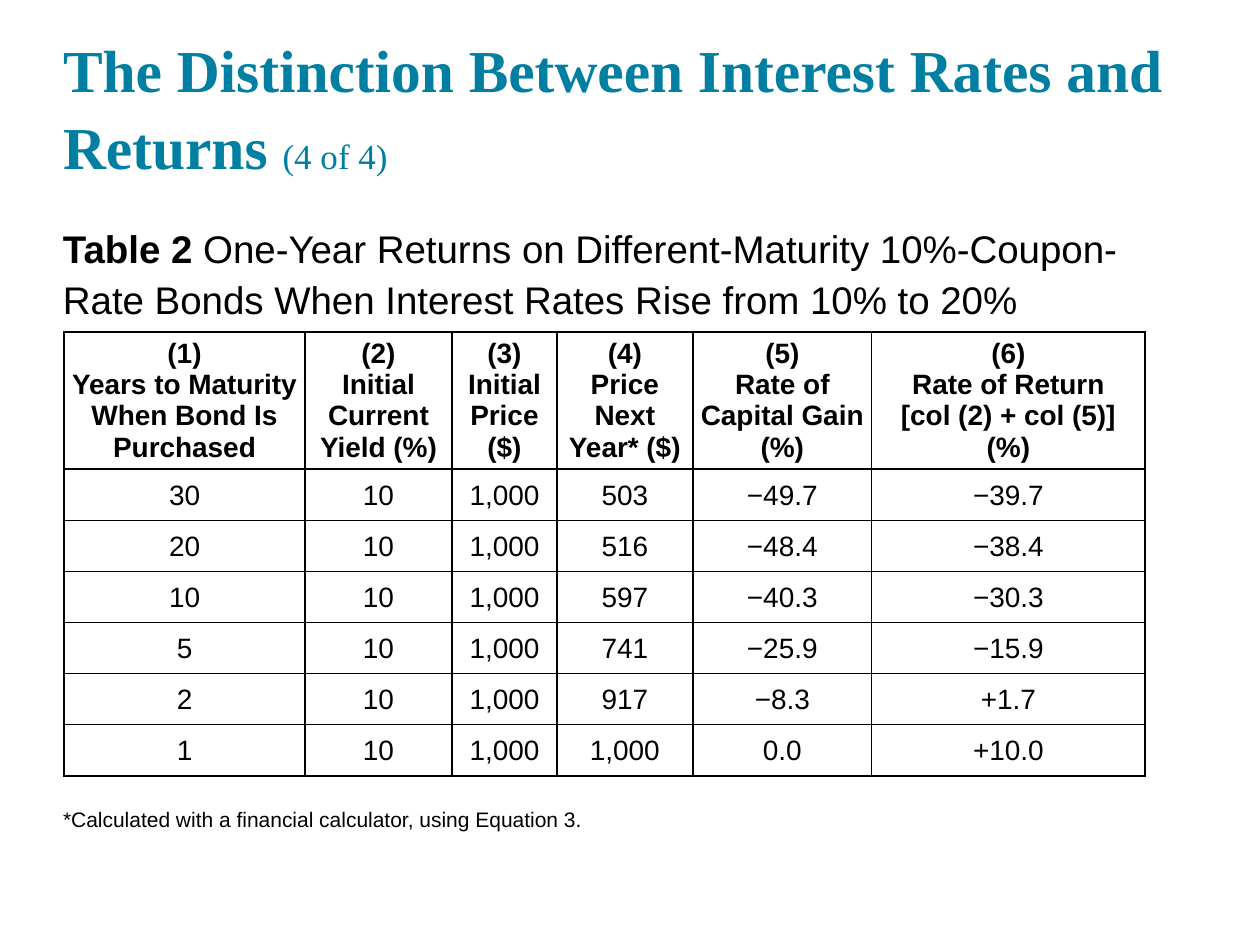
import pptx
import pptx.dml.color
import pptx.enum.text
import pptx.oxml
import pptx.oxml.ns
import pptx.util

Pt = pptx.util.Pt
RGBColor = pptx.dml.color.RGBColor
Anchor = pptx.enum.text.MSO_ANCHOR
Align = pptx.enum.text.PP_ALIGN

TEAL = RGBColor(0x00, 0x7F, 0xA3)
BLACK = RGBColor(0, 0, 0)
WHITE = RGBColor(255, 255, 255)

COLUMN_WIDTHS = [137.5, 84.2, 59.8, 77.8, 102.2, 156.2]
HEADER_HEIGHT = 78.3
ROW_HEIGHT = 29.2
HEADERS = [
    ["(1)", "Years to Maturity When Bond Is Purchased"],
    ["(2)", "Initial Current Yield (%)"],
    ["(3)", "Initial Price ($)"],
    ["(4)", "Price Next Year* ($)"],
    ["(5)", "Rate of Capital Gain (%)"],
    ["(6)", "Rate of Return", "[col (2) + col (5)] (%)"],
]
RETURNS = [
    ["30", "10", "1,000", "503", "−49.7", "−39.7"],
    ["20", "10", "1,000", "516", "−48.4", "−38.4"],
    ["10", "10", "1,000", "597", "−40.3", "−30.3"],
    ["5", "10", "1,000", "741", "−25.9", "−15.9"],
    ["2", "10", "1,000", "917", "−8.3", "+1.7"],
    ["1", "10", "1,000", "1,000", "0.0", "+10.0"],
]


class SlideWriter:
    title_font = "Times New Roman"
    body_font = "Arial"

    def __init__(self, deck):
        self.slide = deck.slides.add_slide(deck.slide_layouts[5])

    def add_span(self, para, text, size, bold=False, color=BLACK, font=body_font):
        span = para.add_run()
        span.text = text
        span.font.name = font
        span.font.size = Pt(size)
        span.font.bold = bold
        span.font.color.rgb = color

    def prepare_frame(self, box, anchor, spacing):
        frame = box.text_frame
        frame.word_wrap = True
        frame.auto_size = pptx.enum.text.MSO_AUTO_SIZE.NONE
        frame.vertical_anchor = anchor
        frame.margin_left = frame.margin_right = 0
        frame.margin_top = frame.margin_bottom = 0
        para = frame.paragraphs[0]
        para.alignment = Align.LEFT
        para.line_spacing = spacing
        return para

    def title(self, left, top, width, height, text, counter):
        box = self.slide.shapes.title
        box.left, box.top = Pt(left), Pt(top)
        box.width, box.height = Pt(width), Pt(height)
        para = self.prepare_frame(box, Anchor.BOTTOM, 1.08)
        self.add_span(para, text, 34, True, TEAL, self.title_font)
        self.add_span(para, counter, 20, False, TEAL, self.title_font)

    def text(self, left, top, width, height, size, spans):
        box = self.slide.shapes.add_textbox(Pt(left), Pt(top), Pt(width), Pt(height))
        para = self.prepare_frame(box, Anchor.TOP, 1.1)
        for text, bold in spans:
            self.add_span(para, text, size, bold)

    def cell(self, cell, lines, header):
        cell.fill.solid()
        cell.fill.fore_color.rgb = WHITE
        cell.vertical_anchor = Anchor.BOTTOM if header else Anchor.TOP
        cell.margin_left = cell.margin_right = Pt(3.6)
        cell.margin_top = cell.margin_bottom = Pt(3.6)
        for index, line in enumerate(lines):
            frame = cell.text_frame
            para = frame.add_paragraph() if index else frame.paragraphs[0]
            para.alignment = Align.CENTER
            para.line_spacing = 1.0 if header else 1.15
            self.add_span(para, line, 16, header)
        properties = cell._tc.get_or_add_tcPr()
        for index, side in enumerate(("lnL", "lnR", "lnT", "lnB")):
            border = pptx.oxml.parse_xml(
                f'<a:{side} {pptx.oxml.ns.nsdecls("a")} w="{Pt(1)}">'
                f'<a:solidFill><a:srgbClr val="{BLACK}"/></a:solidFill></a:{side}>'
            )
            properties.insert(index, border)

    def table(self, left, top, widths, headers, rows):
        height = HEADER_HEIGHT + ROW_HEIGHT * len(rows)
        frame = self.slide.shapes.add_table(
            len(rows) + 1, len(widths), Pt(left), Pt(top), Pt(sum(widths)), Pt(height)
        )
        table = frame.table
        table.horz_banding = False
        for column, width in zip(table.columns, widths):
            column.width = Pt(width)
        contents = [headers] + [[[value] for value in row] for row in rows]
        for row_index, row in enumerate(contents):
            header = row_index == 0
            table.rows[row_index].height = Pt(HEADER_HEIGHT if header else ROW_HEIGHT)
            for column_index, lines in enumerate(row):
                self.cell(table.cell(row_index, column_index), lines, header)


def main():
    deck = pptx.Presentation()
    deck.slide_width, deck.slide_height = Pt(720), Pt(540)
    page = SlideWriter(deck)
    page.title(36, 17.3, 648, 86.4,
               "The Distinction Between Interest Rates and Returns ", "(4 of 4)")
    page.text(36, 126, 648, 54, 22, [
        ("Table 2 ", True),
        ("One-Year Returns on Different-Maturity 10%-Coupon-Rate Bonds "
         "When Interest Rates Rise from 10% to 20%", False),
    ])
    page.table(36.7, 189.8, COLUMN_WIDTHS, HEADERS, RETURNS)
    page.text(36, 459.4, 569.5, 26.6, 12,
              [("*Calculated with a financial calculator, using Equation 3.", False)])
    deck.save("out.pptx")


if __name__ == "__main__":
    main()
